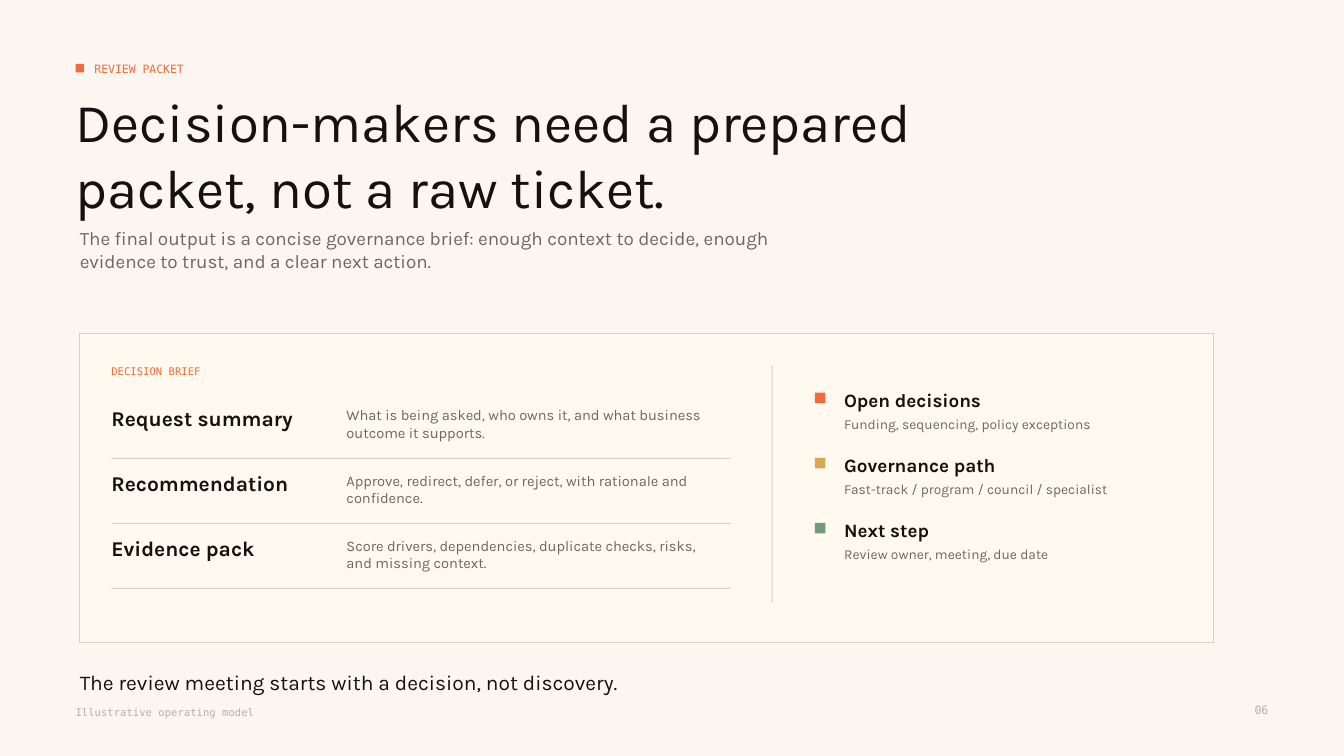
from dataclasses import dataclass

from pptx import Presentation
from pptx import util as u
from pptx.dml import color
from pptx.enum import shapes, text

COLUMNS, ROWS = 1280, 720
UNIT = u.Inches(7.5) // ROWS
PITCH = 62
SANS, MONO = "Karla", "DejaVu Sans Mono"
COLORS = {
    "paper": "FBF7F0",
    "panel": "FFF9EF",
    "rule": "D9D0C6",
    "ink": "15110E",
    "muted": "6F675F",
    "faint": "B8AEA4",
    "orange": "F26B3A",
    "gold": "D6A84F",
    "green": "6E9B78",
}


@dataclass(frozen=True)
class Area:
    column: int
    row: int
    columns: int
    rows: int

    def lower(self, steps: int) -> "Area":
        return Area(self.column, self.row + steps * PITCH, self.columns, self.rows)

    def lengths(self) -> list[int]:
        return [n * UNIT for n in (self.column, self.row, self.columns, self.rows)]


@dataclass(frozen=True)
class Style:
    size: float
    color: str
    font: str = SANS
    bold: bool = False


@dataclass(frozen=True)
class BriefRow:
    name: str
    detail: str


@dataclass(frozen=True)
class Outcome:
    name: str
    detail: str
    color: str


EYEBROW = Style(8.2, "orange", MONO)
TITLE = Style(39, "ink")
SUBTITLE = Style(13.5, "muted")
PANEL_LABEL = Style(7.5, "orange", MONO)
ROW_NAME = Style(15, "ink", bold=True)
ROW_DETAIL = Style(10.5, "muted")
OUTCOME_NAME = Style(13.5, "ink", bold=True)
OUTCOME_DETAIL = Style(9.8, "muted")
TAKEAWAY = Style(15, "ink")
FOOTER = Style(7.5, "faint", MONO)
PAGE_NUMBER = Style(8.2, "faint", MONO)

BRIEF_ROWS = [
    BriefRow("Request summary",
             "What is being asked, who owns it, and what business outcome it supports."),
    BriefRow("Recommendation",
             "Approve, redirect, defer, or reject, with rationale and confidence."),
    BriefRow("Evidence pack",
             "Score drivers, dependencies, duplicate checks, risks, and missing context."),
]
OUTCOMES = [
    Outcome("Open decisions", "Funding, sequencing, policy exceptions", "orange"),
    Outcome("Governance path", "Fast-track / program / council / specialist", "gold"),
    Outcome("Next step", "Review owner, meeting, due date", "green"),
]


def rgb(name: str) -> color.RGBColor:
    return color.RGBColor.from_string(COLORS[name])


def add_block(slide, area: Area, fill: str, outline: str | None = None) -> None:
    shape = slide.shapes.add_shape(shapes.MSO_SHAPE.RECTANGLE, *area.lengths())
    shape.shadow.inherit = False
    shape.fill.solid()
    shape.fill.fore_color.rgb = rgb(fill)
    if outline:
        shape.line.color.rgb = rgb(outline)
        shape.line.width = u.Pt(0.75)
    else:
        shape.line.fill.background()


def add_text(slide, area: Area, words: str, style: Style,
             anchor=text.MSO_ANCHOR.TOP, align=text.PP_ALIGN.LEFT) -> None:
    frame = slide.shapes.add_textbox(*area.lengths()).text_frame
    frame.word_wrap = True
    frame.vertical_anchor = anchor
    frame.margin_left = frame.margin_top = frame.margin_right = frame.margin_bottom = 0
    paragraph = frame.paragraphs[0]
    paragraph.text = words
    paragraph.alignment = align
    paragraph.font.name = style.font
    paragraph.font.size = u.Pt(style.size)
    paragraph.font.bold = style.bold
    paragraph.font.color.rgb = rgb(style.color)


def add_header(slide) -> None:
    add_block(slide, Area(72, 61, 8, 8), "orange")
    add_text(slide, Area(90, 54, 420, 24), "REVIEW PACKET", EYEBROW,
             anchor=text.MSO_ANCHOR.MIDDLE)
    add_text(slide, Area(72, 84, 860, 132),
             "Decision-makers need a prepared packet, not a raw ticket.", TITLE)
    add_text(slide, Area(76, 216, 680, 64),
             "The final output is a concise governance brief: enough context to decide, "
             "enough evidence to trust, and a clear next action.", SUBTITLE)


def add_brief(slide) -> None:
    add_block(slide, Area(76, 318, 1080, 294), "panel", "rule")
    add_text(slide, Area(106, 348, 220, 18), "DECISION BRIEF", PANEL_LABEL)
    for step, row in enumerate(BRIEF_ROWS):
        add_text(slide, Area(106, 386, 210, 24).lower(step), row.name, ROW_NAME)
        add_text(slide, Area(330, 387, 360, 40).lower(step), row.detail, ROW_DETAIL)
        add_block(slide, Area(106, 436, 590, 1).lower(step), "rule")


def add_outcomes(slide) -> None:
    add_block(slide, Area(735, 348, 1, 226), "rule")
    for step, outcome in enumerate(OUTCOMES):
        add_block(slide, Area(776, 374, 10, 10).lower(step), outcome.color)
        add_text(slide, Area(804, 370, 200, 22).lower(step), outcome.name, OUTCOME_NAME)
        add_text(slide, Area(804, 396, 270, 28).lower(step), outcome.detail, OUTCOME_DETAIL)


def add_footer(slide) -> None:
    add_text(slide, Area(76, 638, 720, 28),
             "The review meeting starts with a decision, not discovery.", TAKEAWAY)
    add_text(slide, Area(72, 672, 320, 18), "Illustrative operating model", FOOTER)
    add_text(slide, Area(1160, 670, 48, 20), "06", PAGE_NUMBER,
             align=text.PP_ALIGN.RIGHT)


def main() -> None:
    presentation = Presentation()
    presentation.slide_width = COLUMNS * UNIT
    presentation.slide_height = ROWS * UNIT
    slide = presentation.slides.add_slide(presentation.slide_layouts[6])
    add_block(slide, Area(0, 0, COLUMNS, ROWS), "paper")
    add_header(slide)
    add_brief(slide)
    add_outcomes(slide)
    add_footer(slide)
    presentation.save("out.pptx")


if __name__ == "__main__":
    main()
